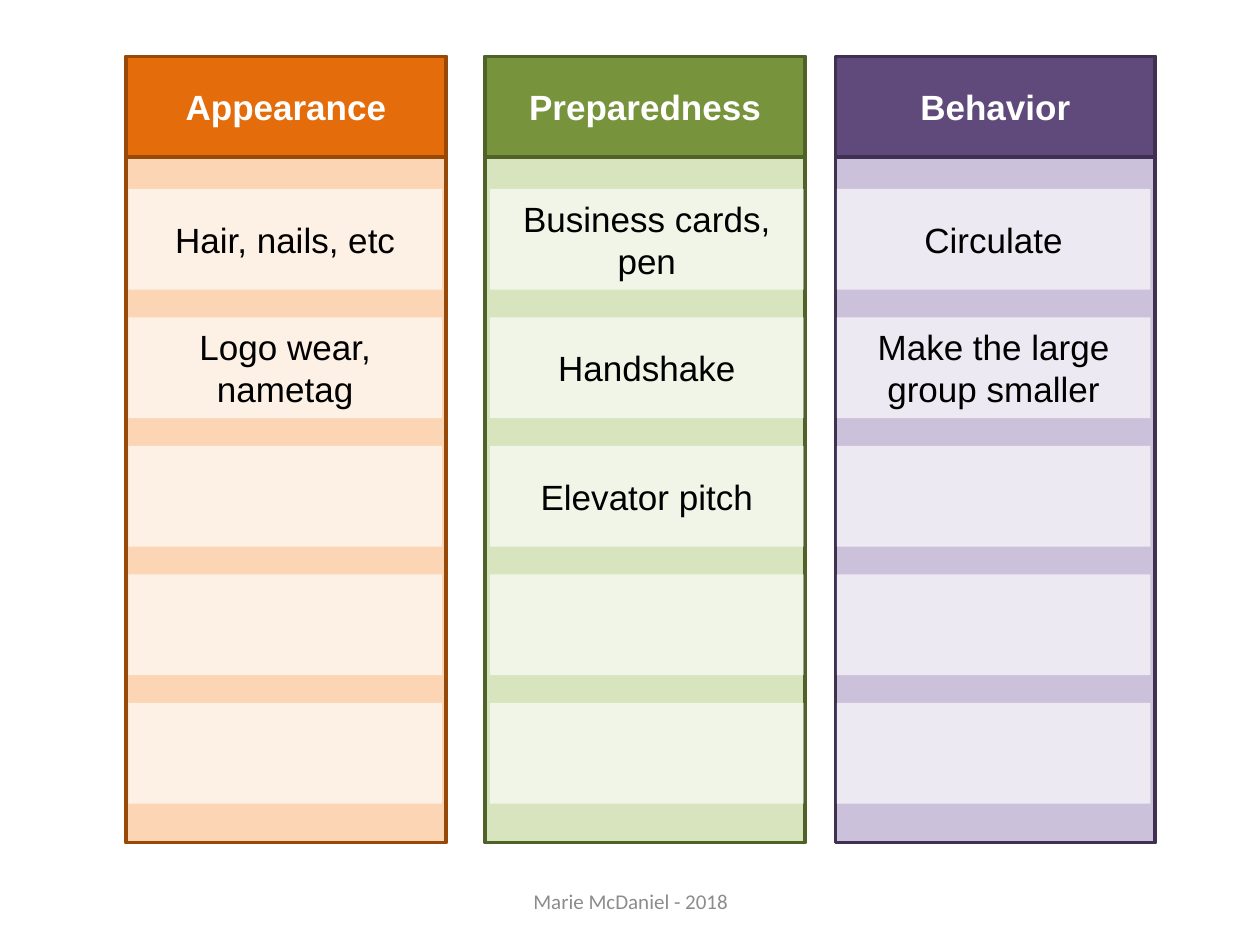
from dataclasses import dataclass

from lxml import etree
from pptx import Presentation
from pptx.dml.color import RGBColor
from pptx.enum.shapes import MSO_SHAPE
from pptx.enum.text import MSO_ANCHOR, PP_ALIGN
from pptx.oxml.ns import qn
from pptx.util import Cm, Pt


@dataclass(frozen=True)
class Theme:
    text: str = "000000"
    light: str = "FFFFFF"
    muted: str = "8C8C8C"
    body_font: str = "Arial"
    footer_font: str = "Calibri"
    body_size: int = 20
    footer_size: int = 12
    border_width: int = 2
    slot_opacity: int = 66
    orange: tuple = ("E46C0A", "FCD5B5", "984807")  # header, panel, border
    green: tuple = ("77933C", "D7E4BD", "4F6228")
    purple: tuple = ("604A7B", "CCC1DA", "403152")


# All lengths in centimetres
COLUMN_TOP, COLUMN_WIDTH, COLUMN_HEIGHT = 1.14, 6.45, 15.85
HEADER_HEIGHT = 2.03
SLOT_TOP, SLOT_WIDTH, SLOT_HEIGHT, SLOT_PITCH = 3.81, 6.32, 2.03, 2.59
SLOT_COUNT = 5


class Board:
    def __init__(self, slide, theme):
        self.slide = slide
        self.theme = theme

    def label(self, frame, text, size, font, color, bold=False):
        frame.word_wrap = True
        frame.vertical_anchor = MSO_ANCHOR.MIDDLE
        paragraph = frame.paragraphs[0]
        paragraph.alignment = PP_ALIGN.CENTER
        run = paragraph.add_run()
        run.text = text
        run.font.size = Pt(size)
        run.font.name = font
        run.font.bold = bold
        run.font.color.rgb = RGBColor.from_string(color)

    def box(self, left, top, width, height, fill, border=None):
        rectangle = self.slide.shapes.add_shape(
            MSO_SHAPE.RECTANGLE, Cm(left), Cm(top), Cm(width), Cm(height))
        rectangle.shadow.inherit = False
        rectangle.fill.solid()
        rectangle.fill.fore_color.rgb = RGBColor.from_string(fill)
        if border:
            rectangle.line.color.rgb = RGBColor.from_string(border)
            rectangle.line.width = Pt(self.theme.border_width)
        else:
            rectangle.line.fill.background()
        return rectangle

    def slot(self, left, top, text):
        """Add a translucent white cell, with text if there is any."""
        theme = self.theme
        cell = self.box(left, top, SLOT_WIDTH, SLOT_HEIGHT, theme.light)
        color = cell.element.spPr.find(qn("a:solidFill"))[0]
        etree.SubElement(color, qn("a:alpha"), val=str(theme.slot_opacity * 1000))
        if text:
            self.label(cell.text_frame, text, theme.body_size, theme.body_font, theme.text)

    def column(self, left, slot_inset, title, entries, palette):
        theme = self.theme
        header_fill, panel_fill, border = palette
        self.box(left, COLUMN_TOP, COLUMN_WIDTH, COLUMN_HEIGHT, panel_fill, border)
        header = self.box(left, COLUMN_TOP, COLUMN_WIDTH, HEADER_HEIGHT, header_fill, border)
        self.label(header.text_frame, title, theme.body_size, theme.body_font,
                   theme.light, bold=True)
        for row in range(SLOT_COUNT):
            entry = entries[row] if row < len(entries) else ""
            self.slot(left + slot_inset, SLOT_TOP + row * SLOT_PITCH, entry)

    def footer(self, text):
        theme = self.theme
        credit = self.slide.shapes.add_textbox(Cm(8.69), Cm(17.65), Cm(8.05), Cm(1.02))
        self.label(credit.text_frame, text, theme.footer_size, theme.footer_font, theme.muted)


def main():
    presentation = Presentation()
    presentation.slide_width, presentation.slide_height = Cm(25.4), Cm(19.05)
    theme = Theme()
    board = Board(presentation.slides.add_slide(presentation.slide_layouts[6]), theme)
    board.footer("Marie McDaniel - 2018")
    board.column(16.84, 0.03, "Behavior",
                 ["Circulate", "Make the large group smaller"], theme.purple)
    board.column(9.78, 0.1, "Preparedness",
                 ["Business cards, pen", "Handshake", "Elevator pitch"], theme.green)
    board.column(2.54, 0.05, "Appearance",
                 ["Hair, nails, etc", "Logo wear, nametag"], theme.orange)
    presentation.save("out.pptx")


if __name__ == "__main__":
    main()
